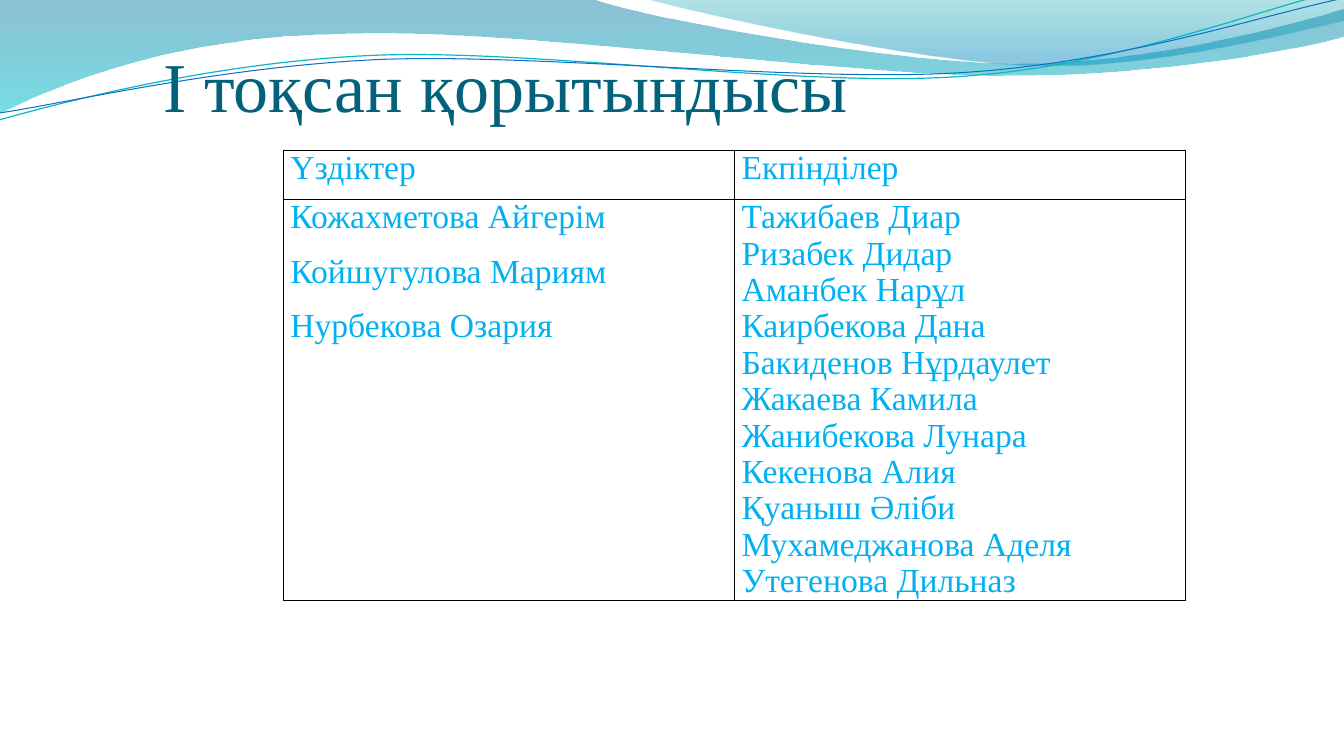
from math import cos, radians, sin
from lxml.etree import SubElement
from pptx import Presentation
from pptx.dml.color import RGBColor as Rgb
from pptx.enum.text import MSO_ANCHOR as Anchor, MSO_AUTO_SIZE as AutoSize, PP_ALIGN as Align
from pptx.oxml.ns import qn
from pptx.util import Inches, Pt

TITLE = "І тоқсан қорытындысы"
HEADERS = ["Үздіктер", "Екпінділер"]
EXCELLENT = ["Кожахметова Айгерім", "Койшугулова Мариям", "Нурбекова Озария"]
GOOD = [
    "Тажибаев Диар", "Ризабек Дидар", "Аманбек Нарұл", "Каирбекова Дана",
    "Бакиденов Нұрдаулет", "Жакаева Камила", "Жанибекова Лунара",
    "Кекенова Алия", "Қуаныш Әліби", "Мухамеджанова Аделя", "Утегенова Дильназ",
]
COLORS = {
    "title": "04617B", "names": "00B0F0", "border": "000000",
    "deep": "0074A1", "aqua": "00C6CF", "teal": "00A1A9", "sky": "008BBF",
    "upper_line": "0AB8BF", "lower_line": "0F6FC6",
}
FONT = "Times New Roman"
BANDS = [
    {
        "route": [
            [(0, 0)], [(5.87, -0.01)],
            [(6.34, 0.17), (8.85, 0.63), (10.11, 0.63)],
            [(11.38, 0.63), (12.78, 0.26), (13.33, 0.09)],
            [(13.35, 0.36)],
            [(13.11, 0.44), (11.6, 0.76), (9.94, 0.75)],
            [(8.29, 0.75), (5.09, 0.28), (3.43, 0.34)],
            [(1.72, 0.36), (0.61, 0.83), (-0.01, 1.13)],
            [(0, 0)],
        ],
        "stops": [("deep", 0, 45), ("aqua", 1, 55)],
    },
    {
        "route": [
            [(6.39, -0.01)],
            [(6.79, 0.11), (9.09, 0.62), (10.25, 0.65)],
            [(11.41, 0.69), (12.82, 0.32), (13.33, 0.21)],
            [(13.33, 0)],
            [(6.39, -0.01)],
        ],
        "stops": [("teal", 0, 30), ("sky", 0.8, 45)],
    },
]
WAVE_TILT = -2.7
WAVES = [
    {
        "route": [
            [(-0.01, 1.19)],
            [(0.64, 1.01), (2.11, 0.62), (3.69, 0.55)],
            [(5.27, 0.48), (7.9, 0.87), (9.5, 0.76)],
            [(11.1, 0.66), (12.52, 0.08), (13.31, -0.1)],
        ],
        "center": (6.65, 0.575), "color": "upper_line", "width": 0.85,
    },
    {
        "route": [
            [(0, 1.12)],
            [(0.63, 1.03), (2.18, 0.66), (3.78, 0.59)],
            [(5.37, 0.53), (7.96, 0.82), (9.55, 0.72)],
            [(11.15, 0.62), (12.55, 0.14), (13.34, -0.02)],
        ],
        "center": (6.67, 0.59), "color": "lower_line", "width": 0.75,
    },
]


def color(name):
    return Rgb.from_string(COLORS[name])


def turn(point, center, degrees):
    angle = radians(degrees)
    x, y = point[0] - center[0], point[1] - center[1]
    return (
        center[0] + x * cos(angle) - y * sin(angle),
        center[1] + x * sin(angle) + y * cos(angle),
    )


def add_outline(page, route, close):
    points = [(Inches(x), Inches(y)) for segment in route for x, y in segment]
    builder = page.shapes.build_freeform(*points[0])
    builder.add_line_segments(points[1:], close=close)
    shape = builder.convert_to_shape()
    shape.shadow.inherit = False
    steps = iter(list(shape._element.iter(qn("a:lnTo"))))
    for segment in route[1:]:
        first, *others = [next(steps) for _ in segment]
        if others:
            first.tag = qn("a:cubicBezTo")
            for step in others:
                first.append(step[0])
                step.getparent().remove(step)
    return shape


def add_band(page, route, stops):
    band = add_outline(page, route, True)
    band.line.fill.background()
    band.fill.gradient()
    band.fill.gradient_angle = 270
    for stop, (name, position, _) in zip(band.fill.gradient_stops, stops):
        stop.color.rgb = color(name)
        stop.position = position
    for tint, (_, _, opacity) in zip(band._element.spPr.iter(qn("a:srgbClr")), stops):
        SubElement(tint, qn("a:alpha"), val=str(opacity * 1000))


def add_wave(page, route, center, line_color, width):
    level = [[turn(point, center, -WAVE_TILT) for point in segment] for segment in route]
    wave = add_outline(page, level, False)
    wave.rotation = WAVE_TILT
    wave.fill.background()
    wave.line.color.rgb = color(line_color)
    wave.line.width = Pt(width)


def style_text(para, size, name):
    para.alignment = Align.LEFT
    for key, value in {"name": FONT, "size": Pt(size), "bold": False}.items():
        setattr(para.font, key, value)
    para.font.color.rgb = color(name)


def fill_cell(cell, lines, gap):
    margins = {"margin_left": 0.07, "margin_right": 0.07, "margin_top": 0, "margin_bottom": 0}
    for key, value in margins.items():
        setattr(cell, key, Inches(value))
    cell.text = "\n".join(lines)
    for para in cell.text_frame.paragraphs:
        style_text(para, 24, "names")
        para.line_spacing = Pt(26)
        para.space_after = Pt(gap)
    properties = cell._tc.get_or_add_tcPr()
    for side in ("a:lnL", "a:lnR", "a:lnT", "a:lnB"):
        border = SubElement(properties, qn(side), w=str(Pt(1)))
        solid = SubElement(border, qn("a:solidFill"))
        SubElement(solid, qn("a:srgbClr"), val=COLORS["border"])
    cell.fill.background()


def add_title(page):
    title = page.shapes.title
    page.shapes._spTree.append(title._element)
    place = {"left": 1.62, "top": 0.23, "width": 10.96, "height": 1.03}
    for key, value in place.items():
        setattr(title, key, Inches(value))
    frame = title.text_frame
    settings = {
        "text": TITLE, "word_wrap": True, "auto_size": AutoSize.NONE,
        "vertical_anchor": Anchor.BOTTOM, "margin_left": 0, "margin_right": 0,
        "margin_top": Inches(0.05), "margin_bottom": 0,
    }
    for key, value in settings.items():
        setattr(frame, key, value)
    style_text(frame.paragraphs[0], 50, "title")


def add_results(page):
    row_heights = [0.49, 3.98]
    width = 8.95
    frame = page.shapes.add_table(
        2, 2, Inches(2.81), Inches(1.49), Inches(width), Inches(sum(row_heights))
    )
    table = frame.table
    table.first_row = table.horz_banding = False
    for column in table.columns:
        column.width = Inches(width / 2)
    for row, height in zip(table.rows, row_heights):
        row.height = Inches(height)
    for index, (header, names, gap) in enumerate(zip(HEADERS, [EXCELLENT, GOOD], [13, 0])):
        fill_cell(table.cell(0, index), [header], 0)
        fill_cell(table.cell(1, index), names, gap)


def main():
    deck = Presentation()
    deck.slide_width, deck.slide_height = Inches(13.33), Inches(7.5)
    page = deck.slides.add_slide(deck.slide_layouts[5])
    for band in BANDS:
        add_band(page, band["route"], band["stops"])
    for wave in WAVES:
        add_wave(page, wave["route"], wave["center"], wave["color"], wave["width"])
    add_title(page)
    add_results(page)
    deck.save("out.pptx")


if __name__ == "__main__":
    main()
